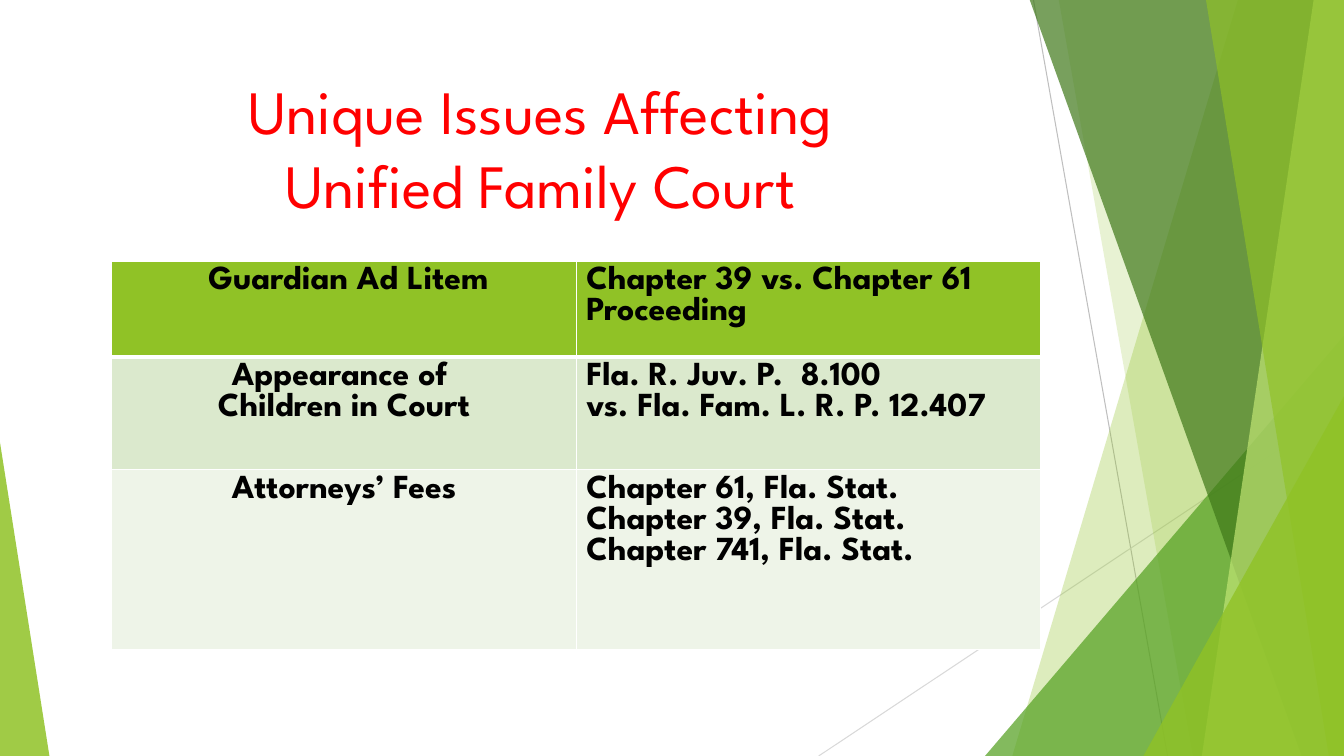
from lxml import etree
from pptx import Presentation
from pptx.dml.color import RGBColor
from pptx.enum import shapes, text
from pptx.oxml import ns
from pptx.util import Inches, Pt

FONT = "League Spartan"
COLORS = {
    "lime": "90C226", "green": "54A021", "forest": "3F7819", "pale": "C0E474",
    "title": "FF0000", "text": "000000", "white": "FFFFFF",
    "line_dark": "BFBFBF", "line_light": "D9D9D9",
    "row_dark": "DBE9CD", "row_light": "EEF4E8",
}
WIDTH, HEIGHT = 13.33, 7.5
BAND_TOP = -0.01

# Content
TITLE_LINES = ["Unique Issues Affecting ", "Unified Family Court "]
COLUMN_WIDTH = 4.605
TABLE_ROWS = [  # height, fill, bottom border in points, lines of both cells
    (0.95, "lime", 3, [[" Guardian Ad Litem"], ["Chapter 39 vs. Chapter 61 Proceeding"]]),
    (1.12, "row_dark", 1, [["Appearance of ", "Children in Court"],
                           ["Fla. R. Juv. P.  8.100", "vs. Fla. Fam. L. R. P. 12.407"]]),
    (1.78, "row_light", 1, [["Attorneys’ Fees"],
                            ["Chapter 61, Fla. Stat.", "Chapter 39, Fla. Stat.",
                             "Chapter 741, Fla. Stat."]]),
]

# Decoration, from back to front
THIN_LINES = [
    ((10.25, 0), (11.58, HEIGHT), "line_dark"),
    ((WIDTH, 4.03), (8.12, HEIGHT), "line_light"),
]
FACETS = [  # bands: top-left x, bottom-left x; triangles: box and apex
    ("band", (12.28, 10.04), "lime", 30),
    ("band", (10.5, 11.83), "lime", 20),
    ("triangle", (9.77, 3.33, 3.56, 4.17, 1), "green", 72),
    ("band", (10.21, 12.91), "forest", 70),
    ("band", (13.03, 11.92), "pale", 70),
    ("band", (11.96, 13.18), "lime", 65),
    ("triangle", (11.34, 3.93, 1.99, 3.57, 1), "lime", 80),
    ("triangle", (0, 4.39, 0.49, 3.11, 0), "lime", 85),
]


def rgb(name):
    return RGBColor.from_string(COLORS[name])


def style_font(font, size, color, bold=False):
    font.name, font.size, font.bold = FONT, Pt(size), bold
    font.color.rgb = rgb(color)


def add_thin_line(slide, start, end, color):
    line = slide.shapes.add_connector(
        shapes.MSO_CONNECTOR.STRAIGHT, *[Inches(value) for value in start + end])
    line.line.color.rgb = rgb(color)
    line.line.width = Pt(0.75)
    etree.SubElement(line._element.spPr, ns.qn("a:effectLst"))


def add_facet(slide, kind, geometry, color, opacity):
    if kind == "band":
        top_x, bottom_x = geometry
        builder = slide.shapes.build_freeform(
            Inches(top_x), Inches(BAND_TOP), scale=1.0)
        corners = [(WIDTH, BAND_TOP), (WIDTH, HEIGHT), (bottom_x, HEIGHT)]
        builder.add_line_segments([(Inches(x), Inches(y)) for x, y in corners])
        facet = builder.convert_to_shape()
    else:
        *box, apex = geometry
        facet = slide.shapes.add_shape(
            shapes.MSO_SHAPE.ISOSCELES_TRIANGLE, *[Inches(value) for value in box])
        facet.adjustments[0] = apex
    facet.shadow.inherit = False
    facet.line.fill.background()
    facet.fill.solid()
    facet.fill.fore_color.rgb = rgb(color)
    color_element = facet._element.spPr.find(".//" + ns.qn("a:srgbClr"))
    etree.SubElement(color_element, ns.qn("a:alpha"), val=str(opacity * 1000))


def add_title(slide):
    title = slide.shapes.add_textbox(Inches(0.74), Inches(0.67), Inches(9.4), Inches(1.44))
    frame = title.text_frame
    frame.word_wrap = True
    frame.vertical_anchor = text.MSO_ANCHOR.TOP
    frame.text = "\v".join(TITLE_LINES)
    paragraph = frame.paragraphs[0]
    paragraph.alignment = text.PP_ALIGN.CENTER
    paragraph.line_spacing = Pt(52.8)
    style_font(paragraph.font, 44, "title")


def set_borders(cell, widths):
    properties = cell._tc.get_or_add_tcPr()
    for index, (side, width) in enumerate(widths.items()):
        border = etree.Element(ns.qn("a:ln" + side), w=str(Pt(width)))
        fill = etree.SubElement(border, ns.qn("a:solidFill"))
        etree.SubElement(fill, ns.qn("a:srgbClr"), val=COLORS["white"])
        properties.insert(index, border)


def add_issue_table(slide):
    total_height = sum(row[0] for row in TABLE_ROWS)
    table = slide.shapes.add_table(
        len(TABLE_ROWS), 2, Inches(1.11), Inches(2.59),
        Inches(2 * COLUMN_WIDTH), Inches(total_height)).table
    for column in table.columns:
        column.width = Inches(COLUMN_WIDTH)
    alignments = [text.PP_ALIGN.CENTER, text.PP_ALIGN.LEFT]
    top_border = 1
    for row_index, (height, fill, bottom_border, contents) in enumerate(TABLE_ROWS):
        table.rows[row_index].height = Inches(height)
        for column_index, lines in enumerate(contents):
            cell = table.cell(row_index, column_index)
            cell.fill.solid()
            cell.fill.fore_color.rgb = rgb(fill)
            set_borders(cell, {"L": 1, "R": 1, "T": top_border, "B": bottom_border})
            cell.text = "\n".join(lines)
            for paragraph in cell.text_frame.paragraphs:
                paragraph.alignment = alignments[column_index]
                style_font(paragraph.font, 24, "text", bold=True)
        top_border = bottom_border


def main():
    presentation = Presentation()
    presentation.slide_width = Inches(WIDTH)
    presentation.slide_height = Inches(HEIGHT)
    slide = presentation.slides.add_slide(presentation.slide_layouts[6])
    for thin_line in THIN_LINES:
        add_thin_line(slide, *thin_line)
    for facet in FACETS:
        add_facet(slide, *facet)
    add_title(slide)
    add_issue_table(slide)
    presentation.save("out.pptx")


if __name__ == "__main__":
    main()
